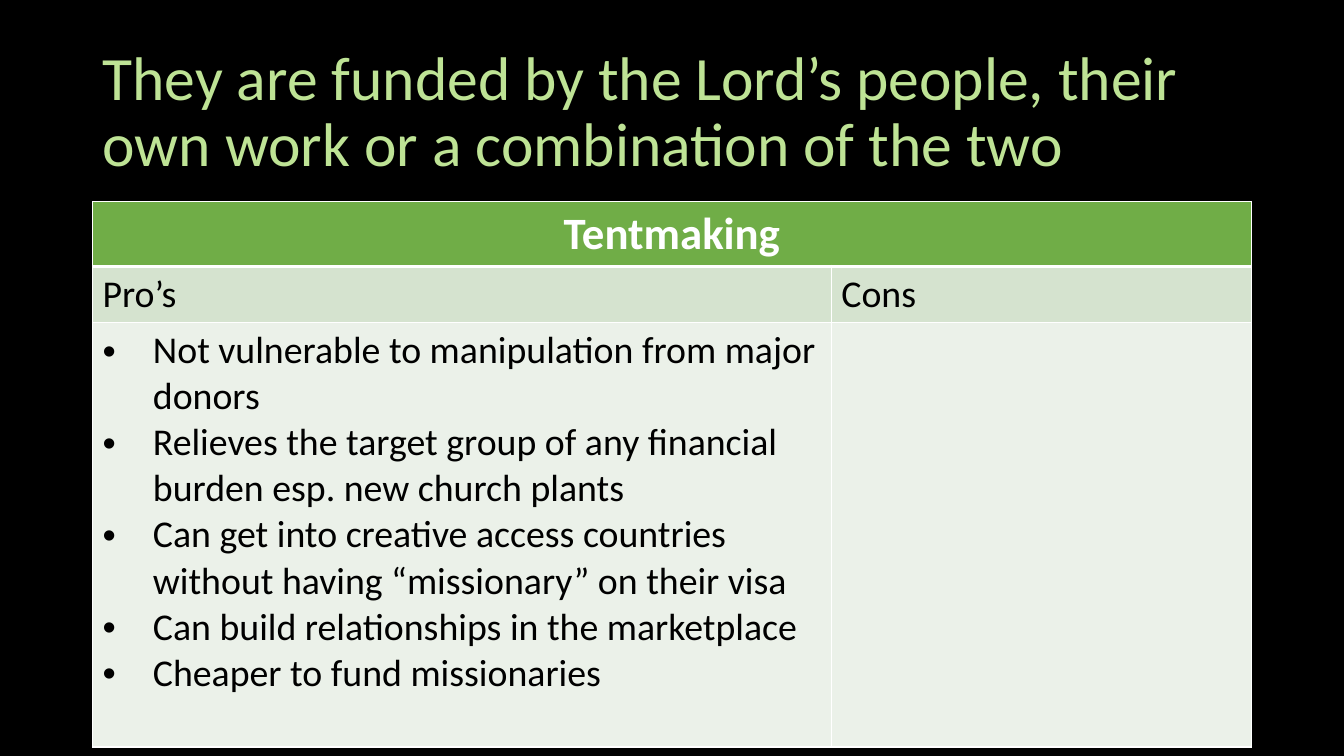
"""Build the tentmaking slide with its table of pros and cons."""
import pptx
import pptx.util
import pptx.dml.color
import pptx.enum.text
import pptx.oxml
import pptx.oxml.ns

Cm, Pt = pptx.util.Cm, pptx.util.Pt
ALIGN = pptx.enum.text.PP_ALIGN

TITLE = "They are funded by the Lord’s people, their own work or a combination of the two"
HEAD = "Tentmaking"
LABELS = ["Pro’s", "Cons"]
PROS = [
    "Not vulnerable to manipulation from major donors",
    "Relieves the target group of any financial burden esp. new church plants",
    "Can get into creative access countries without having “missionary” on their visa",
    "Can build relationships in the marketplace",
    "Cheaper to fund missionaries",
]
ROWS = [[[HEAD], []], [[text] for text in LABELS], [PROS, []]]
COLORS = {"back": "000000", "title": "BEE395", "head": "70AD47", "label": "D5E3CF",
          "body": "EBF1E9", "dark": "000000", "light": "FFFFFF"}
FILLS = ["head", "label", "body"]
FONT = "Calibri"
LEFT, WIDTH = Cm(2.33), Cm(29.21)
WIDTHS = [Cm(18.62), Cm(10.59)]
HEIGHTS = [Cm(1.63), Cm(1.42), Cm(10.69)]
INDENT = Cm(1.27)


def color(name):
    return pptx.dml.color.RGBColor.from_string(COLORS[name])


def make(xml):
    return pptx.oxml.parse_xml(xml.replace(" ", f' {pptx.oxml.ns.nsdecls("a")} ', 1))


def style(para, size, name, bold=False):
    para.font.name = FONT
    para.font.size = Pt(size)
    para.font.bold = bold
    para.font.color.rgb = color(name)


def bullet(para):
    props = para._p.get_or_add_pPr()
    props.set("marL", str(INDENT))
    props.set("indent", str(-INDENT))
    props.insert(0, make('<a:buFont typeface="Arial"/>'))
    props.insert(1, make('<a:buChar char="•"/>'))


def edge(cell, row):
    props = cell._tc.get_or_add_tcPr()
    sizes = {"L": 1, "R": 1, "T": 3 if row == 1 else 1, "B": 3 if row == 0 else 1}
    for spot, (side, size) in enumerate(sizes.items()):
        props.insert(spot, make(
            f'<a:ln{side} w="{Pt(size)}"><a:solidFill><a:srgbClr val="{COLORS["light"]}"/>'
            f'</a:solidFill></a:ln{side}>'))


def fill_cell(cell, row, lines):
    cell.fill.solid()
    cell.fill.fore_color.rgb = color(FILLS[row])
    edge(cell, row)
    if not lines:
        return
    cell.text = "\n".join(lines)
    for para in cell.text_frame.paragraphs:
        if row == 0:
            style(para, 32, "light", True)
            para.alignment = ALIGN.CENTER
        else:
            style(para, 27, "dark")
        if row == 2:
            bullet(para)


def add_title(slide):
    title = slide.shapes.title
    title.left, title.top, title.width, title.height = LEFT, Cm(1.02), WIDTH, Cm(3.68)
    title.text = TITLE
    frame = title.text_frame
    frame.word_wrap = True
    frame.auto_size = pptx.enum.text.MSO_AUTO_SIZE.NONE
    frame.vertical_anchor = pptx.enum.text.MSO_ANCHOR.MIDDLE
    para = frame.paragraphs[0]
    para.alignment = ALIGN.LEFT
    para.line_spacing = 0.9
    style(para, 44, "title")


def add_grid(slide):
    frame = slide.shapes.add_table(len(ROWS), len(WIDTHS), LEFT, Cm(5.08), WIDTH, sum(HEIGHTS))
    table = frame.table
    for col, width in zip(table.columns, WIDTHS):
        col.width = width
    for row, height in zip(table.rows, HEIGHTS):
        row.height = height
    table.cell(0, 0).merge(table.cell(0, 1))
    for row, cells in enumerate(ROWS):
        for col, lines in enumerate(cells):
            fill_cell(table.cell(row, col), row, lines)


def main():
    deck = pptx.Presentation()
    deck.slide_width, deck.slide_height = Cm(33.87), Cm(19.05)
    slide = deck.slides.add_slide(deck.slide_layouts[5])
    slide.background.fill.solid()
    slide.background.fill.fore_color.rgb = color("back")
    add_title(slide)
    add_grid(slide)
    deck.save("out.pptx")


if __name__ == "__main__":
    main()
